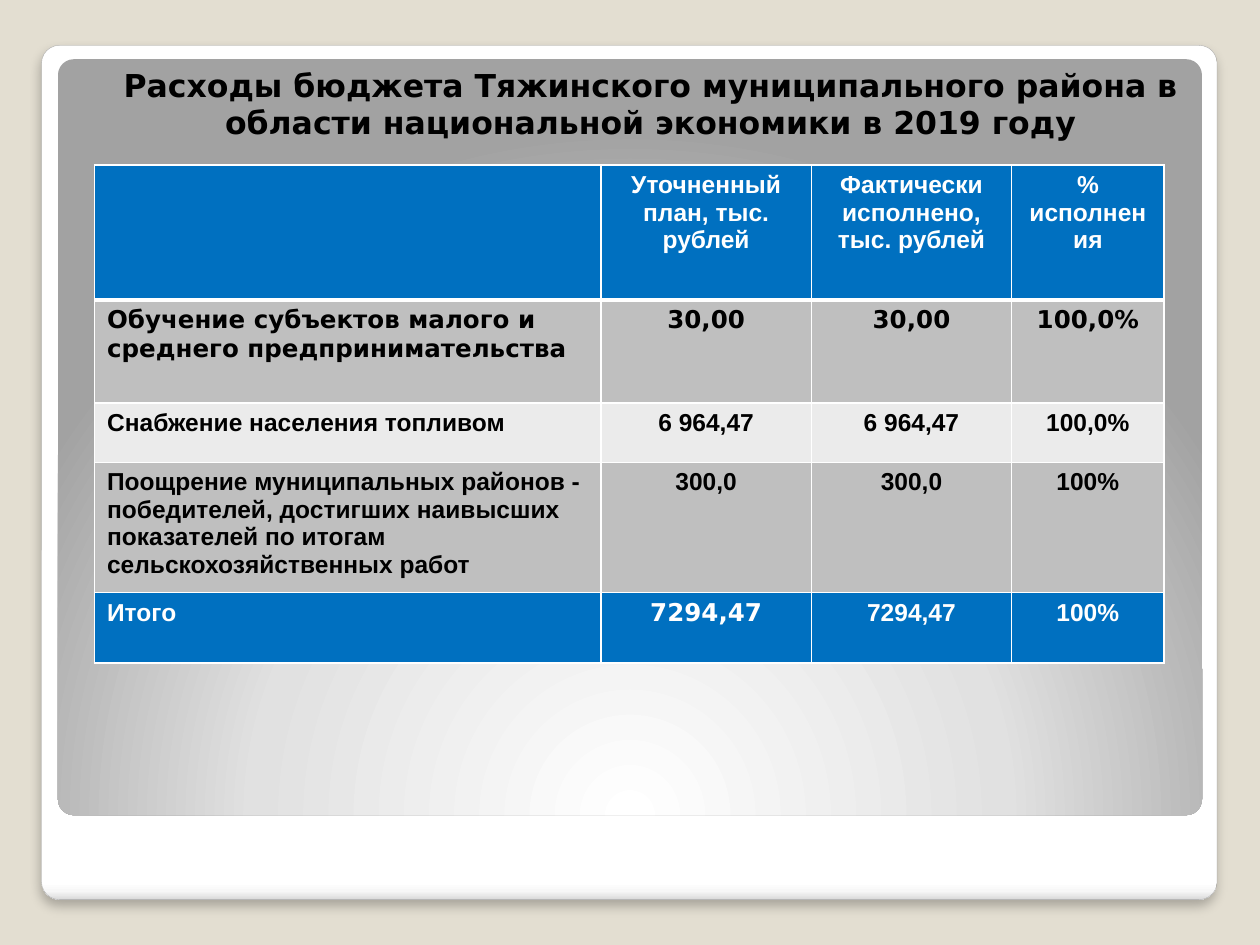
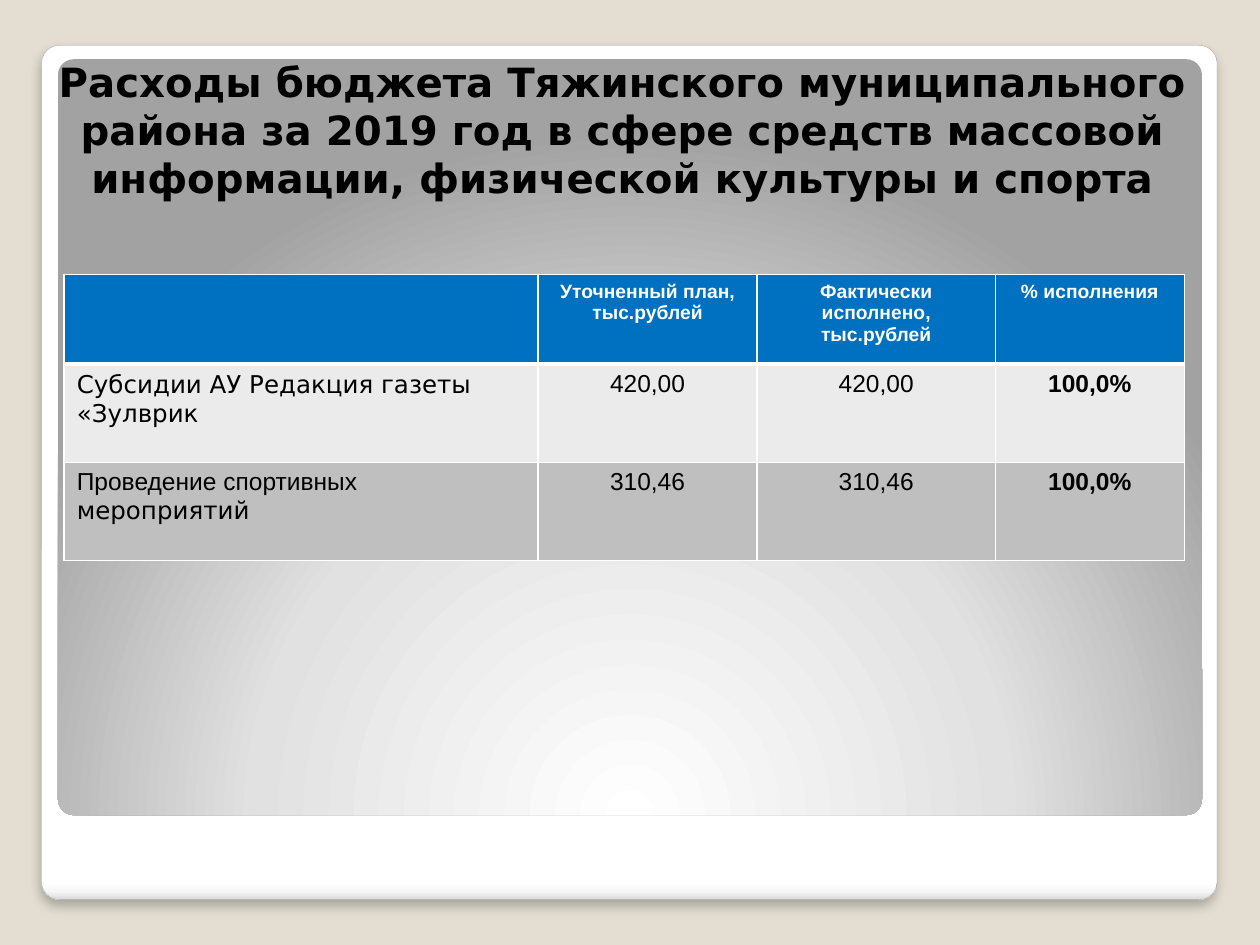
import pptx
import pptx.dml.color
import pptx.enum.shapes
import pptx.enum.text
import pptx.oxml
import pptx.oxml.ns
import pptx.util

Inches = pptx.util.Inches
Pt = pptx.util.Pt
ALIGN = pptx.enum.text.PP_ALIGN

COLORS = {
    "page": "E3DED1", "white": "FFFFFF", "black": "000000", "edge": "A4A4A4",
    "blue": "0070C0", "grey": "BFBFBF", "light": "EBEBEB",
}
ARIAL = "Arial"
DEJAVU = "DejaVu Sans"
CARD = (0.33, 0.36, 9.33, 6.78)
PANEL = (0.46, 0.47, 9.08, 6)
CARD_STOPS = [(0, "FFFFFF"), (98, "FFFFFF"), (99, "F7F7F7"), (100, "DADADA")]
PANEL_STOPS = [(0, "FFFFFF"), (55, "E1E1E1"), (100, "A2A2A2")]
LINEAR = '<a:lin ang="5400000" scaled="0"/>'
RADIAL = ('<a:path path="circle"><a:fillToRect l="50000" t="175000" '
          'r="50000" b="-75000"/></a:path>')


def dejavu(text):
    return [(text, DEJAVU)]


SLIDES = [
    {
        "title": "Расходы бюджета Тяжинского муниципального района в области "
                 "национальной экономики в 2019 году",
        "title_at": (0.33, 0.36, 9.67, 0.81),
        "title_size": 18,
        "table_at": (0.75, 1.31),
        "cols": [4.02, 1.67, 1.59, 1.21],
        "heights": [1.07, 0.82, 0.47, 0.97, 0.56],
        "head_size": 14,
        "first_bold_col": 0,
        "rows": [
            ("blue", ["", "Уточненный план, тыс. рублей",
                      "Фактически исполнено, тыс. рублей", "% исполнения"]),
            ("grey", [dejavu("Обучение субъектов малого и среднего предпринимательства"),
                      dejavu("30,00"), dejavu("30,00"), dejavu("100,0%")]),
            ("light", ["Снабжение населения топливом", "6 964,47", "6 964,47", "100,0%"]),
            ("grey", ["Поощрение муниципальных районов - победителей, достигших "
                      "наивысших показателей по итогам сельскохозяйственных работ",
                      "300,0", "300,0", "100%"]),
            ("blue", ["Итого", dejavu("7294,47"), "7294,47", "100%"]),
        ],
    },
    {
        "title": "Расходы бюджета Тяжинского муниципального района за 2019 год в сфере "
                 "средств массовой информации, физической культуры и спорта",
        "title_at": (0.19, 0.92, 9.51, 0.73),
        "title_size": 23,
        "table_at": (0.51, 2.18),
        "cols": [3.76, 1.74, 1.89, 1.5],
        "heights": [0.71, 0.78, 0.78],
        "head_size": 11,
        "first_bold_col": 3,
        "rows": [
            ("blue", ["", "Уточненный план, тыс.рублей",
                      "Фактически исполнено, тыс.рублей", "% исполнения"]),
            ("light", [dejavu("Субсидии АУ Редакция газеты «Зулврик"),
                       "420,00", "420,00", "100,0%"]),
            ("grey", [[("Проведение спортивных ", ARIAL), ("мероприятий", DEJAVU)],
                      "310,46", "310,46", "100,0%"]),
        ],
    },
]


def rgb(name):
    return pptx.dml.color.RGBColor.from_string(COLORS[name])


def xml(tag, body, attrs=""):
    return pptx.oxml.parse_xml(
        f'<a:{tag} {pptx.oxml.ns.nsdecls("a")} {attrs}>{body}</a:{tag}>')


def add_run(p, text, font, size, color, bold):
    r = p.add_run()
    r.text = text
    r.font.name = font
    r.font.size = Pt(size)
    r.font.bold = bold
    r.font.color.rgb = rgb(color)


def add_rounded(slide, box, stops, direction):
    sp = slide.shapes.add_shape(pptx.enum.shapes.MSO_SHAPE.ROUNDED_RECTANGLE,
                                *map(Inches, box))
    sp.adjustments[0] = 0.021
    sp.shadow.inherit = False
    sp.line.fill.background()
    marks = "".join(f'<a:gs pos="{pos * 1000}"><a:srgbClr val="{color}"/></a:gs>'
                    for pos, color in stops)
    grad = xml("gradFill", f"<a:gsLst>{marks}</a:gsLst>{direction}", 'rotWithShape="1"')
    sp.element.spPr.find(pptx.oxml.ns.qn("a:prstGeom")).addnext(grad)
    return sp


def add_frame(slide):
    card = add_rounded(slide, CARD, CARD_STOPS, LINEAR)
    card.line.color.rgb = rgb("edge")
    card.line.width = Pt(0.16)
    effects = card.element.spPr.find(pptx.oxml.ns.qn("a:effectLst"))
    effects.append(xml(
        "outerShdw",
        f'<a:srgbClr val="{COLORS["black"]}"><a:alpha val="25000"/></a:srgbClr>',
        f'blurRad="{Pt(6)}" dist="{Pt(4)}" dir="5400000" algn="t" rotWithShape="0"'))
    add_rounded(slide, PANEL, PANEL_STOPS, RADIAL)


def add_title(slide, data):
    tf = slide.shapes.add_textbox(*map(Inches, data["title_at"])).text_frame
    tf.word_wrap = True
    tf.vertical_anchor = pptx.enum.text.MSO_ANCHOR.BOTTOM
    p = tf.paragraphs[0]
    p.alignment = ALIGN.CENTER
    add_run(p, data["title"], DEJAVU, data["title_size"], "black", True)


def set_borders(cell, top, bottom):
    tc_pr = cell._tc.get_or_add_tcPr()
    widths = [("lnL", 1), ("lnR", 1), ("lnT", top), ("lnB", bottom)]
    for i, (tag, width) in enumerate(widths):
        fill = f'<a:solidFill><a:srgbClr val="{COLORS["white"]}"/></a:solidFill>'
        tc_pr.insert(i, xml(tag, fill, f'w="{Pt(width)}"'))


def add_budget_table(slide, data):
    cols, heights, rows = data["cols"], data["heights"], data["rows"]
    left, top = data["table_at"]
    table = slide.shapes.add_table(
        len(rows), len(cols), Inches(left), Inches(top),
        Inches(sum(cols)), Inches(sum(heights))).table
    table.first_row = table.horz_banding = False
    for col, width in zip(table.columns, cols):
        col.width = Inches(width)
    for i, (fill, cells) in enumerate(rows):
        table.rows[i].height = Inches(heights[i])
        size = 14 if i else data["head_size"]
        color = "white" if fill == "blue" else "black"
        for j, content in enumerate(cells):
            cell = table.cell(i, j)
            cell.fill.solid()
            cell.fill.fore_color.rgb = rgb(fill)
            set_borders(cell, 3 if i == 1 else 1, 3 if i == 0 else 1)
            p = cell.text_frame.paragraphs[0]
            p.alignment = ALIGN.CENTER if j else ALIGN.LEFT
            runs = [(content, ARIAL)] if isinstance(content, str) else content
            bold = i == 0 or j >= data["first_bold_col"]
            for text, font in runs:
                if text:
                    add_run(p, text, font, size, color, bold)


def main():
    prs = pptx.Presentation()
    prs.slide_width, prs.slide_height = Inches(10), Inches(7.5)
    background = prs.slide_master.background.fill
    background.solid()
    background.fore_color.rgb = rgb("page")
    for data in SLIDES:
        slide = prs.slides.add_slide(prs.slide_layouts[6])
        add_frame(slide)
        add_title(slide, data)
        add_budget_table(slide, data)
    prs.save("out.pptx")


if __name__ == "__main__":
    main()
